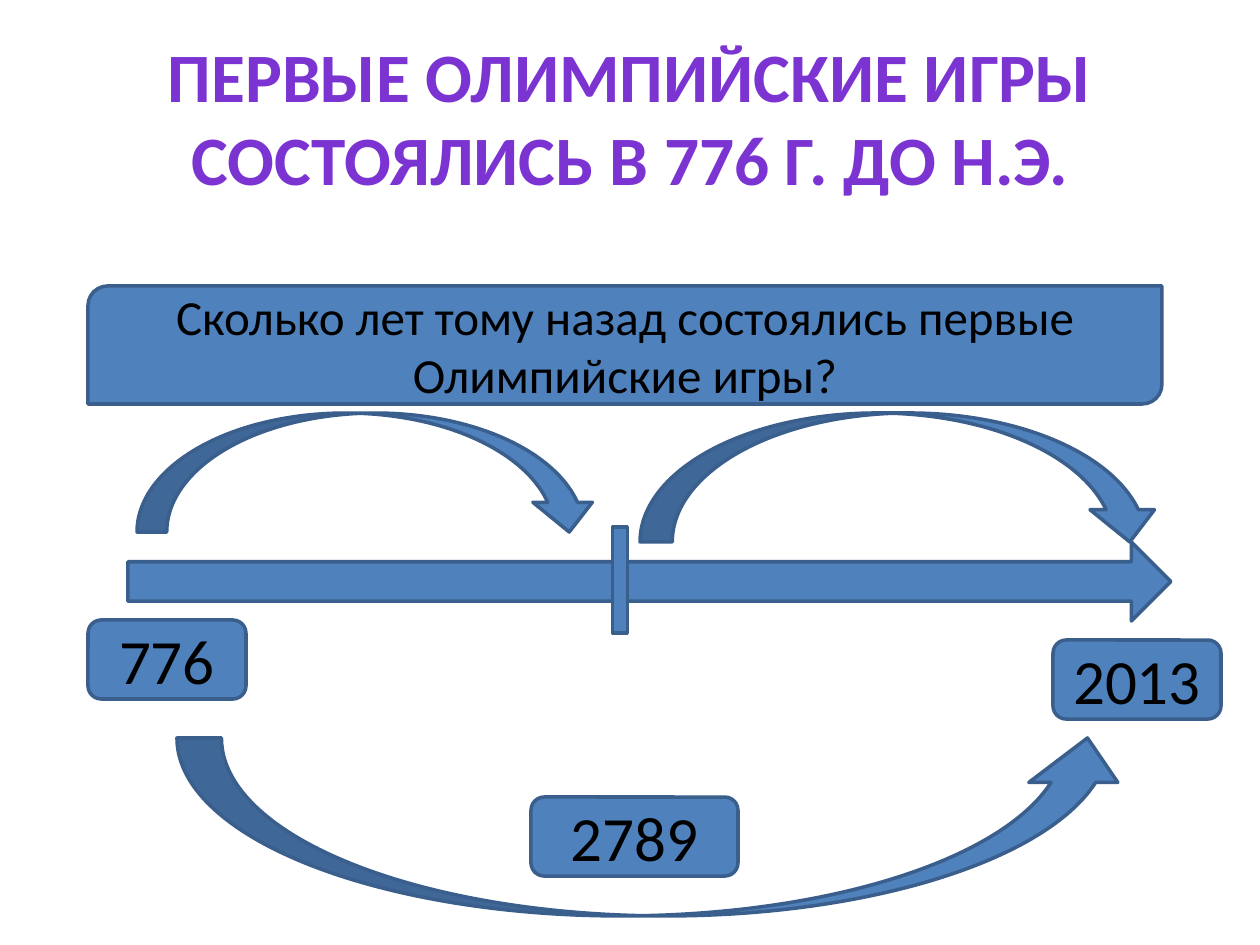
"""Build a slide with a timeline from the first Olympic Games to 2013."""
from dataclasses import dataclass

from pptx import Presentation
from pptx.dml.color import RGBColor
from pptx.enum.shapes import MSO_SHAPE
from pptx.enum.text import MSO_ANCHOR, PP_ALIGN
from pptx.shapes.autoshape import Shape
from pptx.slide import Slide
from pptx.util import Emu, Pt

BANNER = MSO_SHAPE.ROUND_2_DIAG_RECTANGLE
AXIS = MSO_SHAPE.RIGHT_ARROW
TICK = MSO_SHAPE.MATH_MINUS
LABEL = MSO_SHAPE.ROUNDED_RECTANGLE
ARC_OVER = MSO_SHAPE.CURVED_DOWN_ARROW
ARC_UNDER = MSO_SHAPE.CURVED_UP_ARROW
MIDDLE = MSO_ANCHOR.MIDDLE
CENTER = PP_ALIGN.CENTER

PX_PER_INCH = 126
FONT = "Calibri"
COLORS = {
    "title": "7B34D2",
    "fill": "4F81BD",
    "line": "3A5F8C",
    "text": "000000",
}


@dataclass(frozen=True)
class Box:
    left: int
    top: int
    width: int
    height: int


@dataclass(frozen=True)
class Part:
    kind: MSO_SHAPE
    box: Box
    text: str = ""
    size: float = 36


TITLE_BOX = Box(63, 38, 1134, 157)
TITLE = "ПЕРВЫЕ ОЛИМПИЙСКИЕ ИГРЫ СОСТОЯЛИСЬ В 776 Г. ДО Н.Э."
QUESTION = "Сколько лет тому назад состоялись первые Олимпийские игры?"
TIMELINE = (
    Part(BANNER, Box(88, 286, 1074, 118), QUESTION, 28),
    Part(AXIS, Box(128, 542, 1043, 79)),
    Part(TICK, Box(610, 354, 20, 452)),
    Part(LABEL, Box(1053, 640, 168, 79), "2013"),
    Part(LABEL, Box(88, 620, 158, 79), "776"),
    Part(ARC_OVER, Box(640, 413, 522, 129)),
    Part(ARC_OVER, Box(137, 413, 462, 119)),
    Part(ARC_UNDER, Box(177, 738, 955, 178)),
    Part(LABEL, Box(531, 797, 207, 79), "2789"),
)


def px(length: int) -> Emu:
    """Turn a pixel length into EMU."""
    return Emu(round(length * 914400 / PX_PER_INCH))


def place(box: Box) -> tuple[Emu, Emu, Emu, Emu]:
    """Return the position and size of a box in EMU."""
    return px(box.left), px(box.top), px(box.width), px(box.height)


def color(role: str) -> RGBColor:
    """Look up the colour of a role."""
    return RGBColor.from_string(COLORS[role])


def write(holder: Shape, text: str, *, size: float, role: str = "text",
          bold: bool = False) -> None:
    """Write centred text into a shape."""
    frame = holder.text_frame
    frame.word_wrap = True
    frame.vertical_anchor = MIDDLE
    paragraph = frame.paragraphs[0]
    paragraph.alignment = CENTER
    run = paragraph.add_run()
    run.text = text
    run.font.name = FONT
    run.font.size = Pt(size)
    run.font.bold = bold
    run.font.color.rgb = color(role)


def draw(slide: Slide, part: Part) -> None:
    """Draw one part of the timeline with its text."""
    shape = slide.shapes.add_shape(part.kind, *place(part.box))
    shape.shadow.inherit = False
    shape.fill.solid()
    shape.fill.fore_color.rgb = color("fill")
    shape.line.color.rgb = color("line")
    shape.line.width = Pt(2)
    if part.text:
        write(shape, part.text, size=part.size)


def main() -> None:
    """Build and save the slide."""
    deck = Presentation()
    deck.slide_width, deck.slide_height = px(1260), px(945)
    slide = deck.slides.add_slide(deck.slide_layouts[6])
    title = slide.shapes.add_textbox(*place(TITLE_BOX))
    write(title, TITLE, size=39.6, role="title", bold=True)
    for part in TIMELINE:
        draw(slide, part)
    deck.save("out.pptx")


if __name__ == "__main__":
    main()
